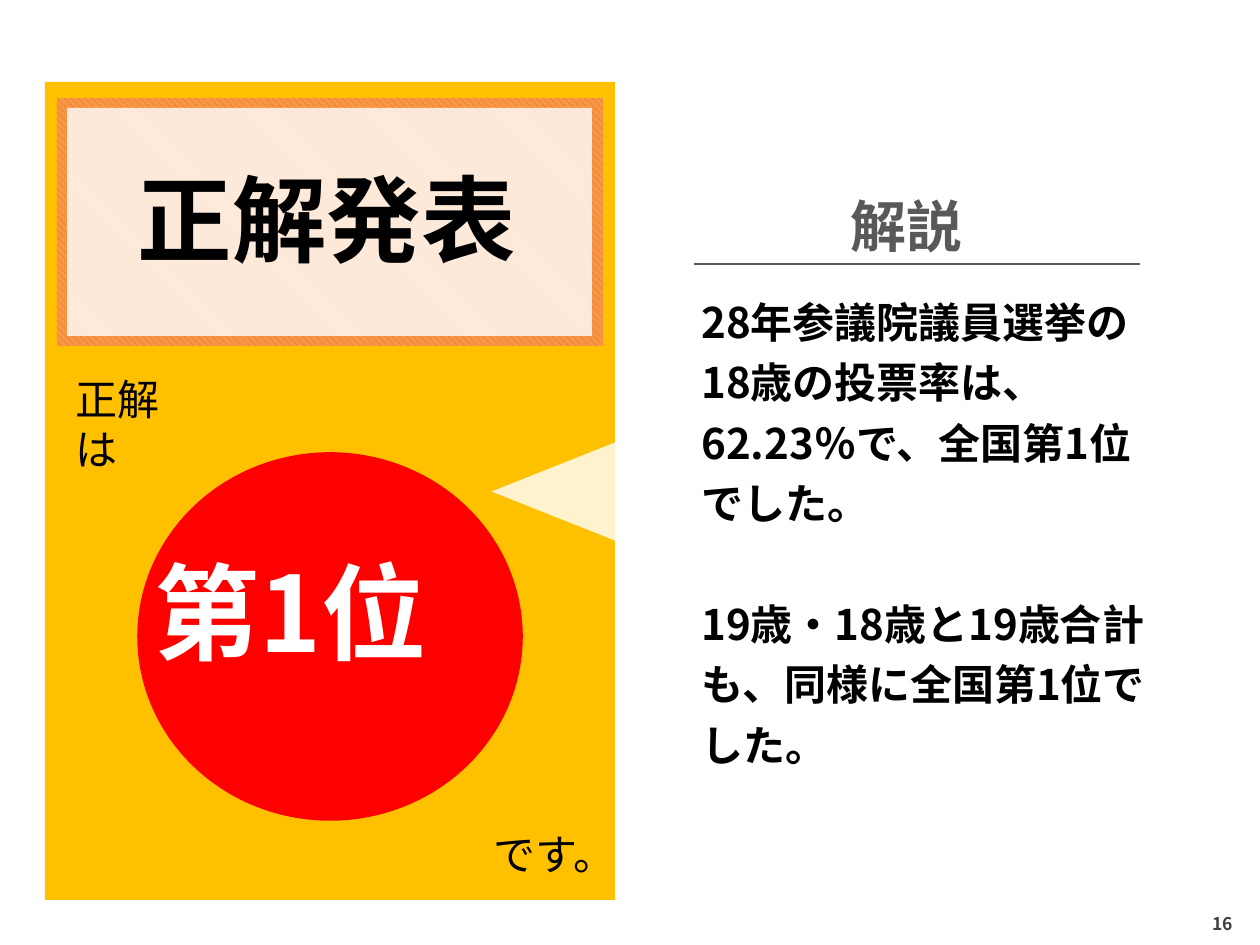
"""Build the quiz answer slide with its explanation."""
from lxml.etree import SubElement
from pptx import Presentation
from pptx.dml.color import RGBColor
from pptx.enum.dml import MSO_PATTERN
from pptx.enum.shapes import MSO_CONNECTOR, MSO_SHAPE
from pptx.enum.text import MSO_ANCHOR, PP_ALIGN
from pptx.oxml.ns import qn
from pptx.util import Emu, Pt

FONT = "Noto Sans CJK JP"
COLORS = {
    name: RGBColor.from_string(value)
    for name, value in {
        "panel": "FFC000",
        "stripe": "E46C0A",
        "frame": "F79646",
        "white": "FFFFFF",
        "red": "FF0000",
        "black": "000000",
        "grey": "595959",
        "number": "404040",
    }.items()
}


def px(*lengths):
    return [Emu(round(length * 914400 / 126)) for length in lengths]


def add_text(box, lines, size, color, bold=True, align=PP_ALIGN.LEFT, wrap=True):
    text_box = slide.shapes.add_textbox(*px(*box))
    frame = text_box.text_frame
    frame.word_wrap = wrap
    frame.text = "\n".join(lines)
    for paragraph in frame.paragraphs:
        paragraph.alignment = align
        font = paragraph.font
        font.name, font.size, font.bold = FONT, Pt(size), bold
        font.color.rgb = COLORS[color]
        properties = paragraph._p.pPr.find(qn("a:defRPr"))
        SubElement(properties, qn("a:ea"), typeface=FONT)
    return frame


presentation = Presentation()
presentation.slide_width, presentation.slide_height = px(1260, 945)
slide = presentation.slides.add_slide(presentation.slide_layouts[6])

shapes = [
    (MSO_SHAPE.RECTANGLE, (45, 82, 570, 818), "panel", None, 0),
    (MSO_SHAPE.RECTANGLE, (57, 98, 546, 248), "frame", None, 0),
    (MSO_SHAPE.RECTANGLE, (67, 108, 525, 228), "white", 80, 0),
    (MSO_SHAPE.ISOSCELES_TRIANGLE, (508, 411, 128, 161), "white", 80, 270),
    (MSO_SHAPE.OVAL, (139, 454, 382, 365), "red", None, 0),
]
for kind, box, color, opacity, rotation in shapes:
    shape = slide.shapes.add_shape(kind, *px(*box))
    shape.shadow.inherit = False
    shape.rotation = rotation
    if color == "frame":
        shape.fill.patterned()
        shape.fill.pattern = MSO_PATTERN.WIDE_DOWNWARD_DIAGONAL
        shape.fill.fore_color.rgb = COLORS["stripe"]
        shape.fill.back_color.rgb = COLORS["frame"]
    else:
        shape.fill.solid()
        shape.fill.fore_color.rgb = COLORS[color]
    if opacity:
        fill_color = shape._element.spPr.find(qn("a:solidFill"))[0]
        SubElement(fill_color, qn("a:alpha"), val=str(opacity * 1000))
    if color == "red":
        shape.line.color.rgb = COLORS["red"]
        shape.line.width = Pt(2)
    else:
        shape.line.fill.background()

add_text((123, 155, 407, 127), ["正解発表"], 54, "black", align=PP_ALIGN.CENTER, wrap=False)
add_text((63, 367, 146, 63), ["正解は"], 24, "black", bold=False)
add_text((481, 822, 125, 63), ["です。"], 24, "black", bold=False)
add_text((142, 541, 378, 140), ["第1位"], 60, "white", align=PP_ALIGN.JUSTIFY)
add_text((838, 185, 139, 81), ["解説"], 32, "grey", wrap=False)

underline = slide.shapes.add_connector(MSO_CONNECTOR.STRAIGHT, *px(694, 264, 1140, 264))
underline.line.color.rgb = COLORS["grey"]
underline.line.width = Pt(0.75)
SubElement(underline._element.spPr, qn("a:effectLst"))

explanation = add_text(
    (689, 280, 486, 501),
    [
        "28年参議院議員選挙の18歳の投票率は、",
        "62.23％で、全国第1位でした。",
        "19歳・18歳と19歳合計も、同様に全国第1位でした。",
    ],
    24,
    "black",
)
for paragraph in explanation.paragraphs:
    paragraph.line_spacing = 1.2
explanation.paragraphs[-1].space_before = Pt(34.5)

page_number = add_text((1186, 901, 74, 44), ["16"], 10, "number", align=PP_ALIGN.CENTER, wrap=False)
page_number.vertical_anchor = MSO_ANCHOR.MIDDLE
page_number.margin_left, page_number.margin_right = px(5, 5)
page_number.margin_top, page_number.margin_bottom = px(5, 5)

presentation.save("out.pptx")
